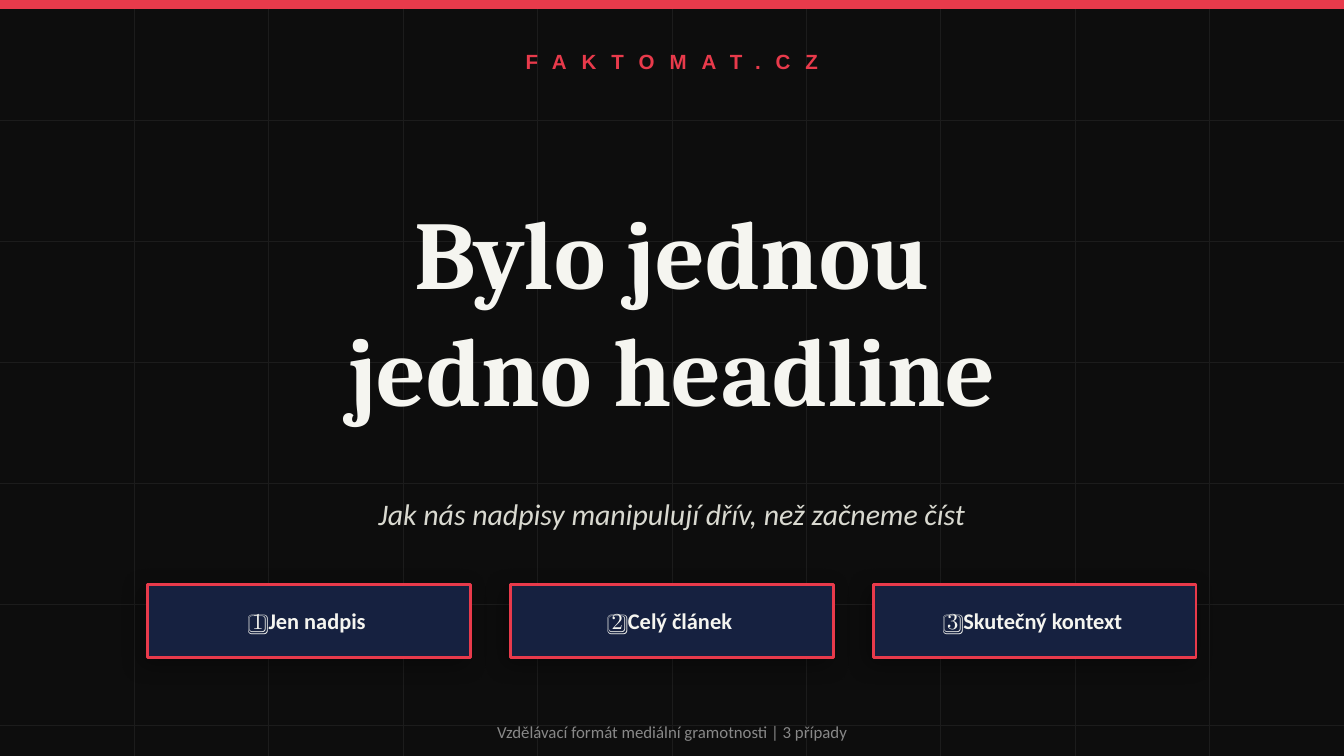
import pptx
import pptx.dml.color
import pptx.enum.shapes
import pptx.enum.text
import pptx.oxml
import pptx.oxml.ns
import pptx.util

# The background grid is also the layout grid: 10 columns by 6.25 rows.
COL = pptx.util.Inches(1)
ROW = pptx.util.Inches(0.9)
COLS, ROWS = 10, 6.25

BLACK, GRID, NAVY = "0D0D0D", "1C1C1C", "162140"
RED, WHITE, CREAM, GREY = "E83A4B", "F5F5F0", "D9D9D0", "888888"

CARDS = ["1️⃣ Jen nadpis", "2️⃣ Celý článek", "3️⃣ Skutečný kontext"]
CARD_LEFT, CARD_WIDTH, CARD_GAP = 1.1, 2.4, 0.3


def rgb(value):
    return pptx.dml.color.RGBColor.from_string(value)


def place(col, row, cols, rows):
    """Turn grid units into left, top, width and height."""
    return [round(v) for v in (col * COL, row * ROW, cols * COL, rows * ROW)]


def add_effects(sp, content=""):
    ns = pptx.oxml.ns.nsdecls("a")
    sp._element.spPr.append(
        pptx.oxml.parse_xml(f"<a:effectLst {ns}>{content}</a:effectLst>"))


def add_grid_line(s, x1, y1, x2, y2):
    ends = round(x1 * COL), round(y1 * ROW), round(x2 * COL), round(y2 * ROW)
    line = s.shapes.add_connector(pptx.enum.shapes.MSO_CONNECTOR.STRAIGHT, *ends)
    line.line.color.rgb = rgb(GRID)
    line.line.width = pptx.util.Pt(0.5)
    add_effects(line)


def add_rect(s, at, fill, line, width):
    sp = s.shapes.add_shape(pptx.enum.shapes.MSO_SHAPE.RECTANGLE, *place(*at))
    sp.fill.solid()
    sp.fill.fore_color.rgb = rgb(fill)
    sp.line.color.rgb = rgb(line)
    sp.line.width = pptx.util.Pt(width)
    return sp


def write(sp, text, size, color, font="Calibri", bold=False, italic=False,
          spacing=0, inset=0.0):
    """Fill a shape with centred text; each line becomes a paragraph."""
    tf = sp.text_frame
    tf.word_wrap = True
    tf.vertical_anchor = pptx.enum.text.MSO_ANCHOR.MIDDLE
    tf.margin_left = tf.margin_right = pptx.util.Inches(inset)
    tf.margin_top = tf.margin_bottom = pptx.util.Inches(inset / 2)
    for i, line in enumerate(text.split("\n")):
        p = tf.add_paragraph() if i else tf.paragraphs[0]
        p.alignment = pptx.enum.text.PP_ALIGN.CENTER
        r = p.add_run()
        r.text = line
        r.font.name = font
        r.font.size = pptx.util.Pt(size)
        r.font.bold = bold
        r.font.italic = italic
        r.font.color.rgb = rgb(color)
        if spacing:
            r._r.get_or_add_rPr().set("spc", str(spacing * 100))


def add_text(s, at, text, **fmt):
    write(s.shapes.add_textbox(*place(*at)), text, **fmt)


def add_card(s, at, text):
    sp = add_rect(s, at, NAVY, RED, 1.5)
    blur, dist = pptx.util.Pt(12), pptx.util.Pt(4)
    add_effects(sp, f'<a:outerShdw blurRad="{blur}" dist="{dist}" dir="{135 * 60000}" '
                    'algn="bl" rotWithShape="0"><a:srgbClr val="000000">'
                    '<a:alpha val="35000"/></a:srgbClr></a:outerShdw>')
    write(sp, text, size=12, color=WHITE, bold=True)


def main():
    prs = pptx.Presentation()
    prs.slide_width, prs.slide_height = place(0, 0, COLS, ROWS)[2:]
    s = prs.slides.add_slide(prs.slide_layouts[6])
    s.background.fill.solid()
    s.background.fill.fore_color.rgb = rgb(BLACK)

    for col in range(1, COLS):
        add_grid_line(s, col, 0, col, ROWS)
    for row in range(1, int(ROWS) + 1):
        add_grid_line(s, 0, row, COLS, row)

    bar = add_rect(s, (0, 0, COLS, 0.07), RED, RED, 1)
    bar.shadow.inherit = False

    add_text(s, (0, 0.31, COLS, 0.39), "FAKTOMAT.CZ",
             size=11, color=RED, font="Arial", bold=True, spacing=8)
    add_text(s, (1, 1.22, 8, 2.67), "Bylo jednou\njedno headline",
             size=52, color=WHITE, font="Cambria", bold=True, inset=0.1)
    add_text(s, (1.5, 3.94, 7, 0.61),
             "Jak nás nadpisy manipulují dřív, než začneme číst",
             size=16, color=CREAM, italic=True, inset=0.1)
    for i, label in enumerate(CARDS):
        left = CARD_LEFT + i * (CARD_WIDTH + CARD_GAP)
        add_card(s, (left, 4.83, CARD_WIDTH, 0.61), label)
    add_text(s, (0, 5.91, COLS, 0.28),
             "Vzdělávací formát mediální gramotnosti | 3 případy",
             size=9, color=GREY)

    prs.save("out.pptx")


if __name__ == "__main__":
    main()
